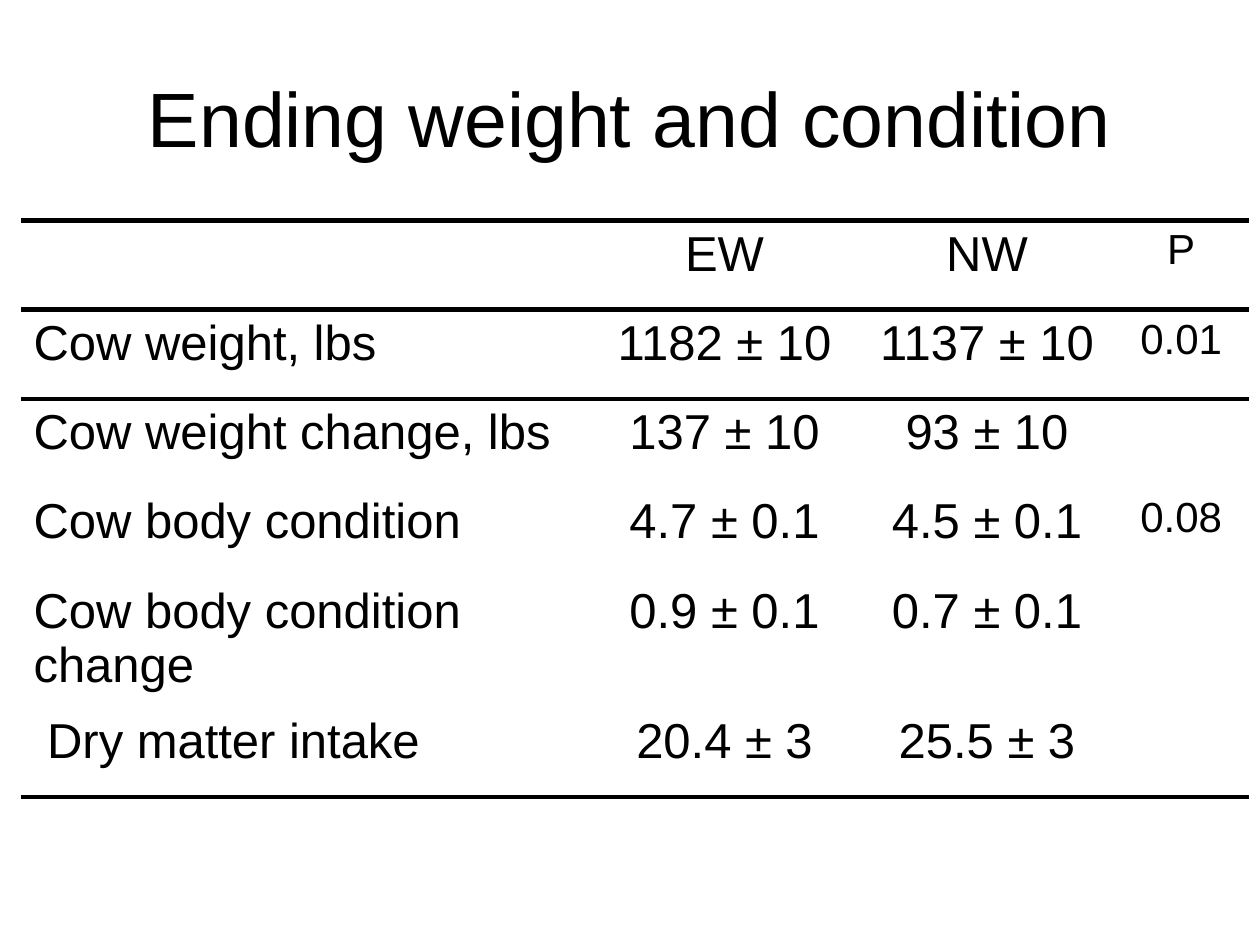
from lxml.etree import SubElement
from pptx import Presentation
from pptx.dml.color import RGBColor
from pptx.enum.text import MSO_ANCHOR as Anchor, PP_ALIGN as Align
from pptx.oxml.ns import qn
from pptx.util import Pt

# Content
TITLE = "Ending weight and condition"
ROWS = [
    ("", "EW", "NW", "P"),
    ("Cow weight, lbs", "1182 ± 10", "1137 ± 10", "0.01"),
    ("Cow weight change, lbs", "137 ± 10", "93 ± 10", ""),
    ("Cow body condition", "4.7 ± 0.1", "4.5 ± 0.1", "0.08"),
    ("Cow body condition change", "0.9 ± 0.1", "0.7 ± 0.1", ""),
    (" Dry matter intake", "20.4 ± 3", "25.5 ± 3", ""),
]
COLUMNS = [(324, 28), (156, 28), (144, 28), (78, 24)]  # width, text size
ROW_HEIGHT = 51
LAST = len(ROWS) - 1
RULES = {0: ("lnT", "lnB"), 1: ("lnT",), LAST: ("lnB",)}  # borders by row
BLACK = "000000"
NO_GRID_STYLE = "{2D5ABB26-0587-4C30-8999-92F81FD0307C}"


def color(value):
    return RGBColor.from_string(value)


def style(para, size, align):
    para.alignment = align
    para.font.name = "Arial"
    para.font.size = Pt(size)
    para.font.color.rgb = color(BLACK)


def add_rule(cell, side):
    line = SubElement(cell._tc.get_or_add_tcPr(), qn(f"a:{side}"), w=str(Pt(3)))
    fill = SubElement(line, qn("a:solidFill"))
    SubElement(fill, qn("a:srgbClr"), val=BLACK)


deck = Presentation()
deck.slide_width, deck.slide_height = Pt(720), Pt(540)
page = deck.slides.add_slide(deck.slide_layouts[6])

# Title
box = page.shapes.add_textbox(Pt(36), Pt(21.6), Pt(648), Pt(90))
frame = box.text_frame
frame.word_wrap = True
frame.vertical_anchor = Anchor.MIDDLE
frame.text = TITLE
style(frame.paragraphs[0], 44, Align.CENTER)

# Table
table_width = sum(width for width, size in COLUMNS)
table = page.shapes.add_table(
    len(ROWS), len(COLUMNS), Pt(12), Pt(126), Pt(table_width), Pt(ROW_HEIGHT * len(ROWS))
).table
table.first_row = table.horz_banding = False
table._tbl.tblPr.find(qn("a:tableStyleId")).text = NO_GRID_STYLE

for column, (width, size) in zip(table.columns, COLUMNS):
    column.width = Pt(width)

for r, values in enumerate(ROWS):
    table.rows[r].height = Pt(ROW_HEIGHT)
    for c, value in enumerate(values):
        cell = table.cell(r, c)
        cell.text = value
        style(cell.text_frame.paragraphs[0], COLUMNS[c][1], Align.CENTER if c else Align.LEFT)
        for side in RULES.get(r, ()):
            add_rule(cell, side)
        cell.fill.background()

deck.save("out.pptx")
